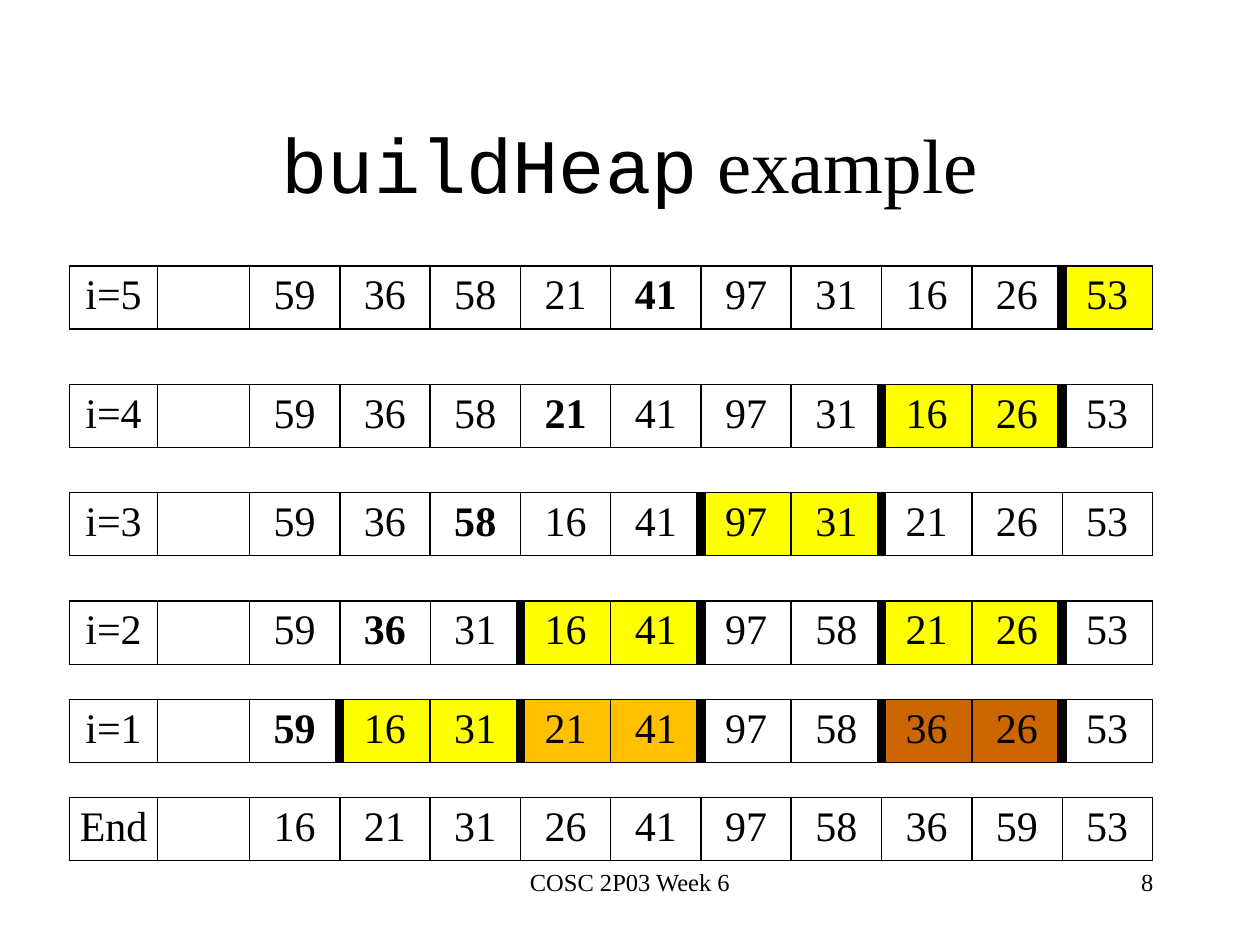
"""Build the buildHeap example slide, one table per step."""
import dataclasses
import typing

import lxml.etree
import pptx
import pptx.dml.color
import pptx.enum.text
import pptx.oxml.ns
import pptx.util

Cm = pptx.util.Cm
Pt = pptx.util.Pt
Align = pptx.enum.text.PP_ALIGN
Anchor = pptx.enum.text.MSO_ANCHOR
SERIF = "Times New Roman"
MONO = "Courier New"
BLACK, WHITE = "000000", "FFFFFF"
YELLOW, AMBER, BROWN = "FFFF00", "FFC000", "CC6600"
LEFT, HEIGHT = 1.4, 1.04
WIDTHS = [1.78, 1.85] + [1.82] * 10


@dataclasses.dataclass
class Step:
    label: str
    top: float
    keys: str
    bold: int = -1
    thick: tuple = ()
    fine: tuple = ()
    fills: dict = dataclasses.field(default_factory=dict)

    def edge(self, col: int) -> float:
        return 6 if col in self.thick else 0.25 if col in self.fine else 1


@dataclasses.dataclass
class Label:
    left: float
    top: float
    width: float
    height: float
    runs: list
    size: int
    align: typing.Any
    anchor: typing.Any = Anchor.TOP


STEPS = [
    Step("i=5", 5.36, "59 36 58 21 41 97 31 16 26 53", 6, (11,), (), {11: YELLOW}),
    Step("i=4", 7.75, "59 36 58 21 41 97 31 16 26 53", 5, (9, 11), (),
         {9: YELLOW, 10: YELLOW, 11: WHITE}),
    Step("i=3", 9.93, "59 36 58 16 41 97 31 21 26 53", 4, (7, 9), (11,),
         {7: YELLOW, 8: YELLOW, 11: WHITE}),
    Step("i=2", 12.12, "59 36 31 16 41 97 58 21 26 53", 3, (5, 7, 9, 11), (4,),
         {5: YELLOW, 6: YELLOW, 9: YELLOW, 10: YELLOW, 11: WHITE}),
    Step("i=1", 14.1, "59 16 31 21 41 97 58 36 26 53", 2, (3, 5, 7, 9, 11), (),
         {3: YELLOW, 4: YELLOW, 5: AMBER, 6: AMBER, 7: WHITE, 8: WHITE,
          9: BROWN, 10: BROWN, 11: WHITE}),
    Step("End", 16.08, "16 21 31 26 41 97 58 36 59 53", fine=(11,), fills={11: WHITE}),
]
LABELS = [
    Label(1.9, 1.7, 21.6, 3.18, [("buildHeap", MONO), (" example", SERIF)], 44,
          Align.CENTER, Anchor.MIDDLE),
    Label(8.68, 17.35, 8.04, 1.27, [("COSC 2P03 Week 6", SERIF)], 14, Align.CENTER),
    Label(18.2, 17.35, 5.3, 1.27, [("8", SERIF)], 14, Align.RIGHT),
]


def tint(color: typing.Any, code: str) -> None:
    color.rgb = pptx.dml.color.RGBColor.from_string(code)


def style(font: typing.Any, face: str, size: int) -> None:
    font.name = face
    font.size = Pt(size)
    tint(font.color, BLACK)


def border(cell: typing.Any, side: str, width: float) -> None:
    props = cell._tc.get_or_add_tcPr()
    line = lxml.etree.SubElement(props, pptx.oxml.ns.qn("a:ln" + side), w=str(Pt(width)))
    fill = lxml.etree.SubElement(line, pptx.oxml.ns.qn("a:solidFill"))
    lxml.etree.SubElement(fill, pptx.oxml.ns.qn("a:srgbClr"), val=BLACK)


def write(slide: typing.Any, label: Label) -> None:
    box = slide.shapes.add_textbox(
        Cm(label.left), Cm(label.top), Cm(label.width), Cm(label.height))
    frame = box.text_frame
    frame.word_wrap = True
    frame.vertical_anchor = label.anchor
    para = frame.paragraphs[0]
    para.alignment = label.align
    for text, face in label.runs:
        run = para.add_run()
        run.text = text
        style(run.font, face, label.size)


def draw(slide: typing.Any, step: Step) -> None:
    grid = slide.shapes.add_table(
        1, len(WIDTHS), Cm(LEFT), Cm(step.top), Cm(sum(WIDTHS)), Cm(HEIGHT)).table
    grid.first_row = grid.horz_banding = False
    texts = [step.label, ""] + step.keys.split()
    for col, (width, text) in enumerate(zip(WIDTHS, texts)):
        grid.columns[col].width = Cm(width)
        cell = grid.cell(0, col)
        sides = {"L": step.edge(col), "R": step.edge(col + 1), "T": 1, "B": 1}
        for side, size in sides.items():
            border(cell, side, size)
        if col in step.fills:
            cell.fill.solid()
            tint(cell.fill.fore_color, step.fills[col])
        else:
            cell.fill.background()
        if text == "End":
            cell.margin_left = cell.margin_right = 0
        para = cell.text_frame.paragraphs[0]
        para.text = text
        para.alignment = Align.CENTER
        for run in para.runs:
            style(run.font, SERIF, 24)
            run.font.bold = col == step.bold


def main() -> None:
    deck = pptx.Presentation()
    deck.slide_width, deck.slide_height = Cm(25.4), Cm(19.05)
    slide = deck.slides.add_slide(deck.slide_layouts[6])
    for label in LABELS:
        write(slide, label)
    for step in STEPS:
        draw(slide, step)
    deck.save("out.pptx")


if __name__ == "__main__":
    main()
